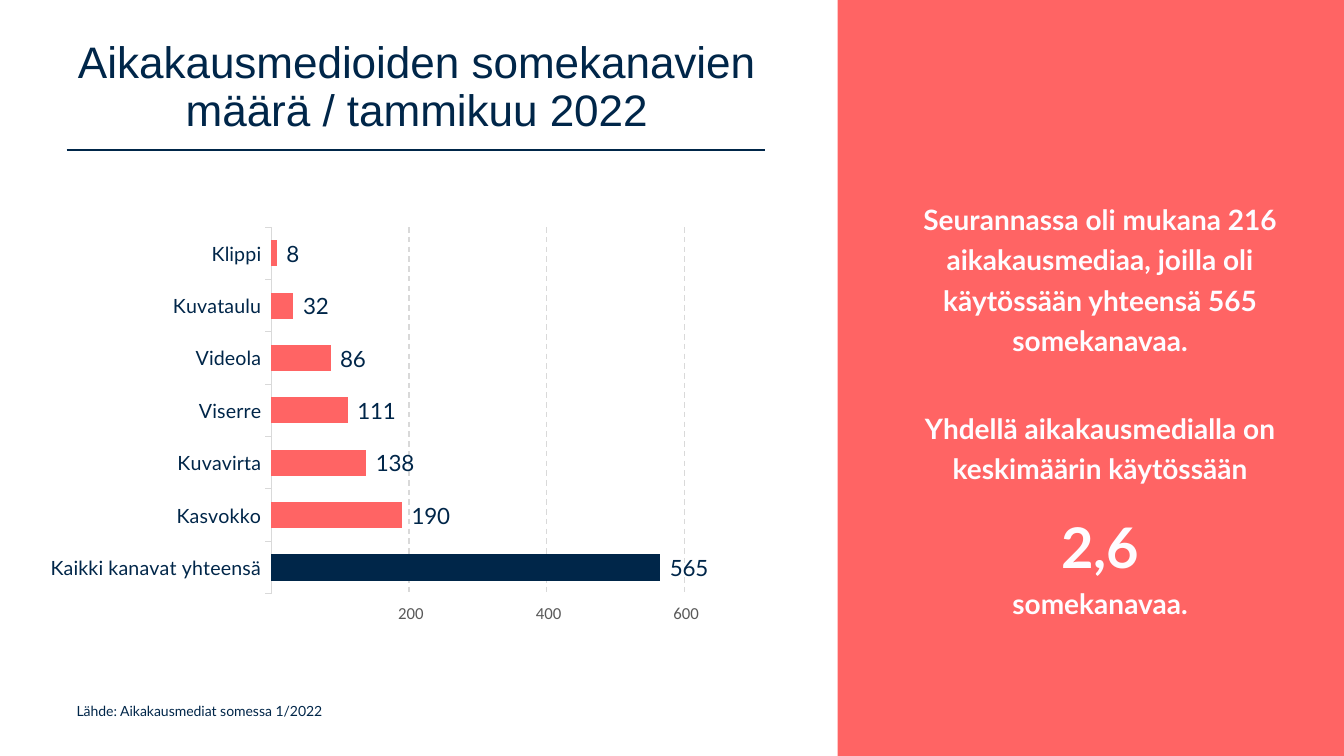
from lxml import etree
from pptx import Presentation
from pptx.chart.data import CategoryChartData
from pptx.dml.color import RGBColor
from pptx.enum.chart import XL_CHART_TYPE, XL_LABEL_POSITION, XL_TICK_MARK
from pptx.enum.dml import MSO_LINE
from pptx.enum.shapes import MSO_CONNECTOR, MSO_SHAPE
from pptx.enum.text import MSO_ANCHOR, PP_ALIGN
from pptx.oxml.ns import qn
from pptx.util import Cm, Pt

BAR = XL_CHART_TYPE.BAR_CLUSTERED
OUTSIDE_END = XL_LABEL_POSITION.OUTSIDE_END
TICK_OUT = XL_TICK_MARK.OUTSIDE
DASH = MSO_LINE.DASH
STRAIGHT = MSO_CONNECTOR.STRAIGHT
RECTANGLE = MSO_SHAPE.RECTANGLE
MIDDLE = MSO_ANCHOR.MIDDLE
TOP = MSO_ANCHOR.TOP
CENTER = PP_ALIGN.CENTER
LEFT = PP_ALIGN.LEFT

COLORS = {name: RGBColor.from_string(value) for name, value in {
    "navy": "002649", "coral": "FF6464", "white": "FEFCFF",
    "grid": "D9D9D9", "gray": "595959",
}.items()}
NUMBER_FORMAT = r"#\ ##0;\-#\ ##0;;@"


def style_font(font, name, size, color, bold=False):
    font.name, font.size, font.bold = name, Pt(size), bold
    font.color.rgb = COLORS[color]


def add_text(page, place, lines, name, color, anchor, align, spacing=1.0, bold=False):
    """Add a text box; each line is (text, size, space before)."""
    box = page.shapes.add_textbox(*(Cm(length) for length in place))
    frame = box.text_frame
    frame.word_wrap = True
    frame.vertical_anchor = anchor
    for index, (text, size, space) in enumerate(lines):
        para = frame.add_paragraph() if index else frame.paragraphs[0]
        para.text = text
        para.alignment = align
        para.line_spacing = spacing
        para.space_before = Pt(space)
        style_font(para.font, name, size, color, bold)


deck = Presentation()
deck.slide_width, deck.slide_height = Cm(33.87), Cm(19.05)
page = deck.slides.add_slide(deck.slide_layouts[6])

# Side panel and title rule
panel = page.shapes.add_shape(RECTANGLE, Cm(21.11), 0, Cm(12.76), deck.slide_height)
panel.shadow.inherit = False
panel.fill.solid()
panel.fill.fore_color.rgb = COLORS["coral"]
panel.line.fill.background()

rule = page.shapes.add_connector(STRAIGHT, Cm(1.68), Cm(3.78), Cm(19.28), Cm(3.78))
rule.line.color.rgb = COLORS["navy"]
rule.line.width = Pt(1)
etree.SubElement(rule._element.spPr, qn("a:effectLst"))

# Texts
add_text(page, (1.68, 0.64, 17.65, 3.18),
         [("Aikakausmedioiden somekanavien määrä / tammikuu 2022", 31.5, 0)],
         "Arial", "navy", MIDDLE, CENTER, spacing=0.9)
add_text(page, (1.68, 17.58, 16.71, 1.12),
         [("Lähde: Aikakausmediat somessa 1/2022", 10, 0)],
         "Lato", "navy", TOP, LEFT)
add_text(page, (22.96, 3.81, 9.53, 12.95), [
    ("Seurannassa oli mukana 216 aikakausmediaa, joilla oli "
     "käytössään yhteensä 565 somekanavaa.", 20, 0),
    ("Yhdellä aikakausmedialla on keskimäärin käytössään", 20, 34),
    ("2,6", 40, 10),
    ("somekanavaa.", 20, 0),
], "Lato", "white", MIDDLE, CENTER, spacing=1.2, bold=True)

# Channel chart
channels = {
    "Kaikki kanavat yhteensä": 565, "Kasvokko": 190, "Kuvavirta": 138,
    "Viserre": 111, "Videola": 86, "Kuvataulu": 32, "Klippi": 8,
}
data = CategoryChartData(number_format=NUMBER_FORMAT)
data.categories = list(channels)
data.add_series("Somekanavat", list(channels.values()))
chart = page.shapes.add_chart(BAR, 0, Cm(4.78), Cm(21.11), Cm(11.02), data).chart
chart.has_legend = False
chart.has_title = False
style_font(chart.font, "Calibri", 10, "gray")

category_axis = chart.category_axis
category_axis.major_tick_mark = TICK_OUT
category_axis.format.line.color.rgb = COLORS["grid"]
category_axis.format.line.width = Pt(0.75)
style_font(category_axis.tick_labels.font, "Lato", 14, "navy")

value_axis = chart.value_axis
value_axis.minimum_scale, value_axis.maximum_scale = 0, 600
value_axis.major_unit = 200
value_axis.major_tick_mark = TICK_OUT
value_axis.format.line.fill.background()
grid_line = value_axis.major_gridlines.format.line
grid_line.color.rgb = COLORS["grid"]
grid_line.width = Pt(1)
grid_line.dash_style = DASH
value_axis.tick_labels.number_format = NUMBER_FORMAT
value_axis.tick_labels.number_format_is_linked = False
style_font(value_axis.tick_labels.font, "Calibri", 12, "gray")

plot = chart.plots[0]
plot.gap_width = 100
plot.vary_by_categories = False
bars = plot.series[0]
total_bar = bars.points[0]
for item, color in ((bars, "coral"), (total_bar, "navy")):
    item.format.fill.solid()
    item.format.fill.fore_color.rgb = COLORS[color]

labels = bars.data_labels
labels.show_value = True
labels.position = OUTSIDE_END
labels.number_format = NUMBER_FORMAT
labels.number_format_is_linked = False
style_font(labels.font, "Lato", 16, "navy")

# Fixed inner plot area, as shares of the chart
plot_area = chart._chartSpace.chart.plotArea
for old_layout in plot_area.findall(qn("c:layout")):
    plot_area.remove(old_layout)
layout = etree.Element(qn("c:layout"))
plot_area.insert(0, layout)
manual = etree.SubElement(layout, qn("c:manualLayout"))
for tag, value in (("layoutTarget", "inner"), ("xMode", "edge"), ("yMode", "edge"),
                   ("x", "0.324"), ("y", "0.086"), ("w", "0.493"), ("h", "0.838")):
    etree.SubElement(manual, qn(f"c:{tag}")).set("val", value)

deck.save("out.pptx")
